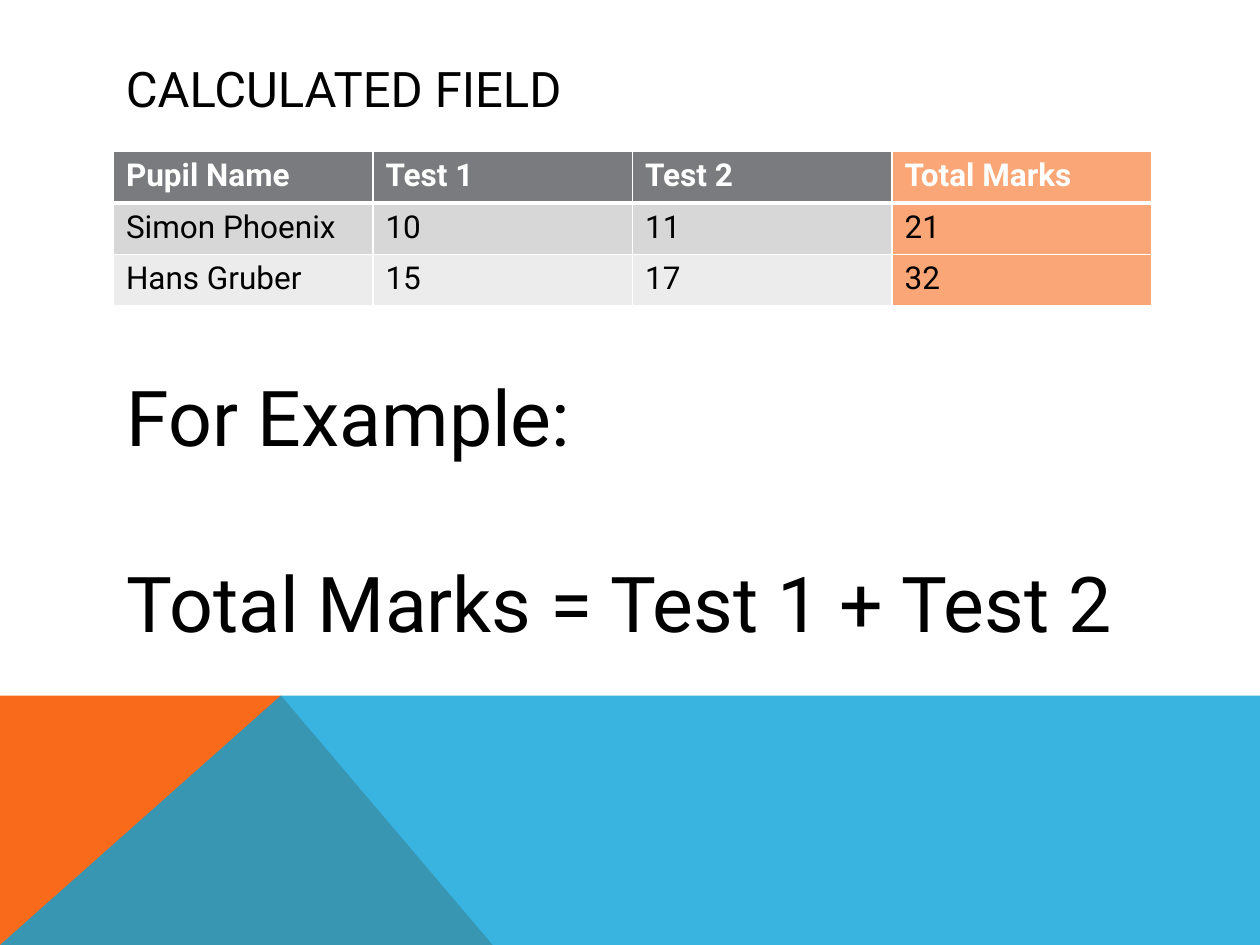
import pptx
import pptx.dml.color
import pptx.enum.text
import pptx.oxml
import pptx.oxml.ns
import pptx.util
from pptx.util import Inches

TITLE = "CALCULATED FIELD"
MARKS = [
    ("Pupil Name", "Test 1", "Test 2", "Total Marks"),
    ("Simon Phoenix", "10", "11", "21"),
    ("Hans Gruber", "15", "17", "32"),
]
EXAMPLE = ["For Example:", "Total Marks = Test 1 + Test 2"]

THEME = {
    "font": "Roboto",
    "text": "000000",
    "light": "FFFFFF",
    "rows": ["797B7E", "D7D7D8", "ECECEC"],
    "calculated": "FBA676",
    "orange": "F96A1B",
    "blue": "08A1D9",
    "title_size": 28,
    "table_size": 18,
    "example_size": 44,
    "example_gap": 54,
    "border": 1,
    "header_border": 3,
}

WIDTH, HEIGHT = 10, 7.5
BAND_TOP, PEAK = 5.52, 2.23
BANDS = [
    ([(0, HEIGHT), (0, BAND_TOP), (PEAK, BAND_TOP), (3.91, HEIGHT)], THEME["orange"], 100),
    ([(0, HEIGHT), (PEAK, BAND_TOP), (WIDTH, BAND_TOP), (WIDTH, HEIGHT)], THEME["blue"], 80),
]
COLUMN_WIDTH, ROW_HEIGHT = 2.06, 0.41


def rgb(value):
    return pptx.dml.color.RGBColor.from_string(value)


def style(paragraph, size, color, bold=False):
    font = paragraph.font
    font.name = THEME["font"]
    font.size = pptx.util.Pt(size)
    font.bold = bold
    font.color.rgb = rgb(color)


def add_band(slide, points, color, opacity):
    corners = [(Inches(x), Inches(y)) for x, y in points]
    builder = slide.shapes.build_freeform(*corners[0], scale=1.0)
    builder.add_line_segments(corners[1:], close=True)
    shape = builder.convert_to_shape()
    shape.shadow.inherit = False
    shape.line.fill.background()
    shape.fill.solid()
    shape.fill.fore_color.rgb = rgb(color)
    if opacity < 100:
        color_element = shape.fill._xPr.find(".//" + pptx.oxml.ns.qn("a:srgbClr"))
        color_element.append(pptx.oxml.parse_xml(
            f'<a:alpha {pptx.oxml.ns.nsdecls("a")} val="{opacity * 1000}"/>'))


def add_text(slide, box, lines, size, gap=0, anchor=pptx.enum.text.MSO_ANCHOR.TOP):
    frame = slide.shapes.add_textbox(*map(Inches, box)).text_frame
    frame.word_wrap = True
    frame.vertical_anchor = anchor
    for index, line in enumerate(lines):
        paragraph = frame.add_paragraph() if index else frame.paragraphs[0]
        paragraph.text = line
        style(paragraph, size, THEME["text"])
        if index:
            paragraph.space_before = pptx.util.Pt(gap)


def set_borders(cell, widths):
    properties = cell._tc.get_or_add_tcPr()
    for side, width in widths.items():
        properties.append(pptx.oxml.parse_xml(
            f'<a:ln{side} {pptx.oxml.ns.nsdecls("a")} w="{pptx.util.Pt(width)}">'
            f'<a:solidFill><a:srgbClr val="{THEME["light"]}"/></a:solidFill></a:ln{side}>'))


def add_marks_table(slide, left, top):
    row_count, column_count = len(MARKS), len(MARKS[0])
    table = slide.shapes.add_table(
        row_count, column_count, Inches(left), Inches(top),
        Inches(COLUMN_WIDTH * column_count), Inches(ROW_HEIGHT * row_count)).table
    for column in table.columns:
        column.width = Inches(COLUMN_WIDTH)
    thin, thick = THEME["border"], THEME["header_border"]
    for row_index, values in enumerate(MARKS):
        table.rows[row_index].height = Inches(ROW_HEIGHT)
        header = row_index == 0
        for column_index, value in enumerate(values):
            cell = table.cell(row_index, column_index)
            set_borders(cell, {
                "L": thin, "R": thin,
                "T": thick if row_index == 1 else thin,
                "B": thick if header else thin,
            })
            calculated = column_index == column_count - 1
            cell.fill.solid()
            cell.fill.fore_color.rgb = rgb(
                THEME["calculated"] if calculated else THEME["rows"][row_index])
            cell.text = value
            style(cell.text_frame.paragraphs[0], THEME["table_size"],
                  THEME["light"] if header else THEME["text"], header)


def main():
    presentation = pptx.Presentation()
    presentation.slide_width = Inches(WIDTH)
    presentation.slide_height = Inches(HEIGHT)
    slide = presentation.slides.add_slide(presentation.slide_layouts[6])
    for band in BANDS:
        add_band(slide, *band)
    add_text(slide, (0.9, 0.4, 8.22, 0.6), [TITLE], THEME["title_size"],
             anchor=pptx.enum.text.MSO_ANCHOR.MIDDLE)
    add_marks_table(slide, 0.9, 1.2)
    add_text(slide, (0.91, 2.88, 8.03, 2.32), EXAMPLE, THEME["example_size"],
             THEME["example_gap"])
    presentation.save("out.pptx")


if __name__ == "__main__":
    main()
